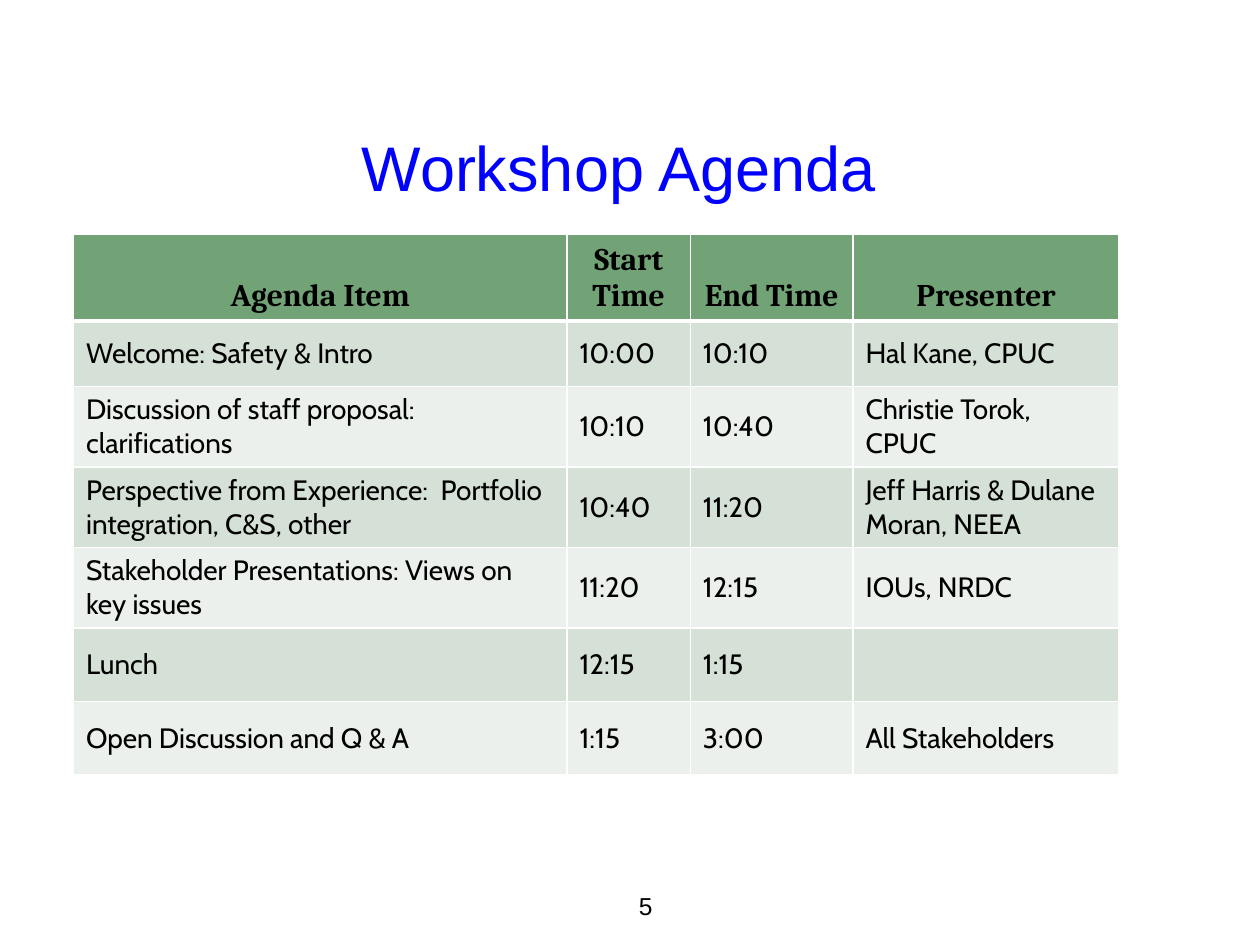
"""Build the workshop agenda slide."""
import pptx
import pptx.dml.color
import pptx.enum.text
import pptx.oxml
import pptx.oxml.ns
import pptx.util

Pt = pptx.util.Pt
ANCHOR = pptx.enum.text.MSO_ANCHOR
ALIGN = pptx.enum.text.PP_ALIGN


def color(hex_code):
    return pptx.dml.color.RGBColor.from_string(hex_code)


class AgendaSlide:
    BLACK, BLUE, WHITE = "000000", "0000FF", "FFFFFF"
    HEADER_FILL, BAND_FILLS = "72A376", ("D5E0D6", "EBF0EC")
    PLAIN_FONT, HEADER_FONT, BODY_FONT = "Arial", "Cambria", "Cabin"

    def __init__(self, deck):
        self.slide = deck.slides.add_slide(deck.slide_layouts[5])

    def add_text(self, frame, text, font, size, ink=BLACK, align=ALIGN.LEFT, bold=False):
        paragraph = frame.paragraphs[0]
        paragraph.alignment = align
        if text:
            run = paragraph.add_run()
            run.text = text
            run.font.name, run.font.size, run.font.bold = font, Pt(size), bold
            run.font.color.rgb = color(ink)

    def title(self, text, left, top, width, height):
        heading = self.slide.shapes.title
        heading.left, heading.top = Pt(left), Pt(top)
        heading.width, heading.height = Pt(width), Pt(height)
        heading.text_frame.vertical_anchor = ANCHOR.MIDDLE
        self.add_text(heading.text_frame, text, self.PLAIN_FONT, 36, self.BLUE, ALIGN.CENTER)

    def page_number(self, text, left, top, width, height):
        box = self.slide.shapes.add_textbox(Pt(left), Pt(top), Pt(width), Pt(height))
        box.text_frame.word_wrap = True
        box.text_frame.vertical_anchor = ANCHOR.BOTTOM
        self.add_text(box.text_frame, text, self.PLAIN_FONT, 14, align=ALIGN.CENTER)

    def borders(self, cell, widths):
        properties = cell._tc.get_or_add_tcPr()
        for position, (side, width) in enumerate(widths.items()):
            properties.insert(position, pptx.oxml.parse_xml(
                f'<a:{side} {pptx.oxml.ns.nsdecls("a")} w="{Pt(width)}"><a:solidFill>'
                f'<a:srgbClr val="{self.WHITE}"/></a:solidFill></a:{side}>'))

    def table(self, rows, left, top, column_widths, row_heights):
        agenda = self.slide.shapes.add_table(
            len(rows), len(column_widths), Pt(left), Pt(top),
            Pt(sum(column_widths)), Pt(sum(row_heights))).table
        for column, width in zip(agenda.columns, column_widths):
            column.width = Pt(width)
        for row, height in zip(agenda.rows, row_heights):
            row.height = Pt(height)
        for r, texts in enumerate(rows):
            header = r == 0
            for c, text in enumerate(texts):
                cell = agenda.cell(r, c)
                cell.fill.solid()
                fill = self.HEADER_FILL if header else self.BAND_FILLS[(r - 1) % 2]
                cell.fill.fore_color.rgb = color(fill)
                self.borders(cell, {"lnL": 1, "lnR": 1, "lnT": 3 if r == 1 else 1,
                                    "lnB": 3 if header else 1})
                cell.vertical_anchor = ANCHOR.BOTTOM if header else ANCHOR.MIDDLE
                if header:
                    self.add_text(cell.text_frame, text, self.HEADER_FONT, 18,
                                  align=ALIGN.CENTER, bold=True)
                else:
                    self.add_text(cell.text_frame, text, self.BODY_FONT, 16)


AGENDA = [
    ("Agenda Item", "Start Time", "End Time", "Presenter"),
    ("Welcome: Safety & Intro", "10:00", "10:10", "Hal Kane, CPUC"),
    ("Discussion of staff proposal: clarifications", "10:10", "10:40", "Christie Torok, CPUC"),
    ("Perspective from Experience:  Portfolio integration, C&S, other", "10:40", "11:20",
     "Jeff Harris & Dulane Moran, NEEA"),
    ("Stakeholder Presentations: Views on key issues", "11:20", "12:15", "IOUs, NRDC"),
    ("Lunch", "12:15", "1:15", ""),
    ("Open Discussion and Q & A", "1:15", "3:00", "All Stakeholders"),
]


def main():
    deck = pptx.Presentation()
    deck.slide_width, deck.slide_height = Pt(720), Pt(540)
    page = AgendaSlide(deck)
    page.title("Workshop Agenda", 29.5, 56, 648, 78)
    page.table(AGENDA, 42, 134, (282, 70.5, 93, 152), (49.5, 37.5, 46, 46, 45, 42, 42))
    page.page_number("5", 294, 492, 150, 37.5)
    deck.save("out.pptx")


if __name__ == "__main__":
    main()
